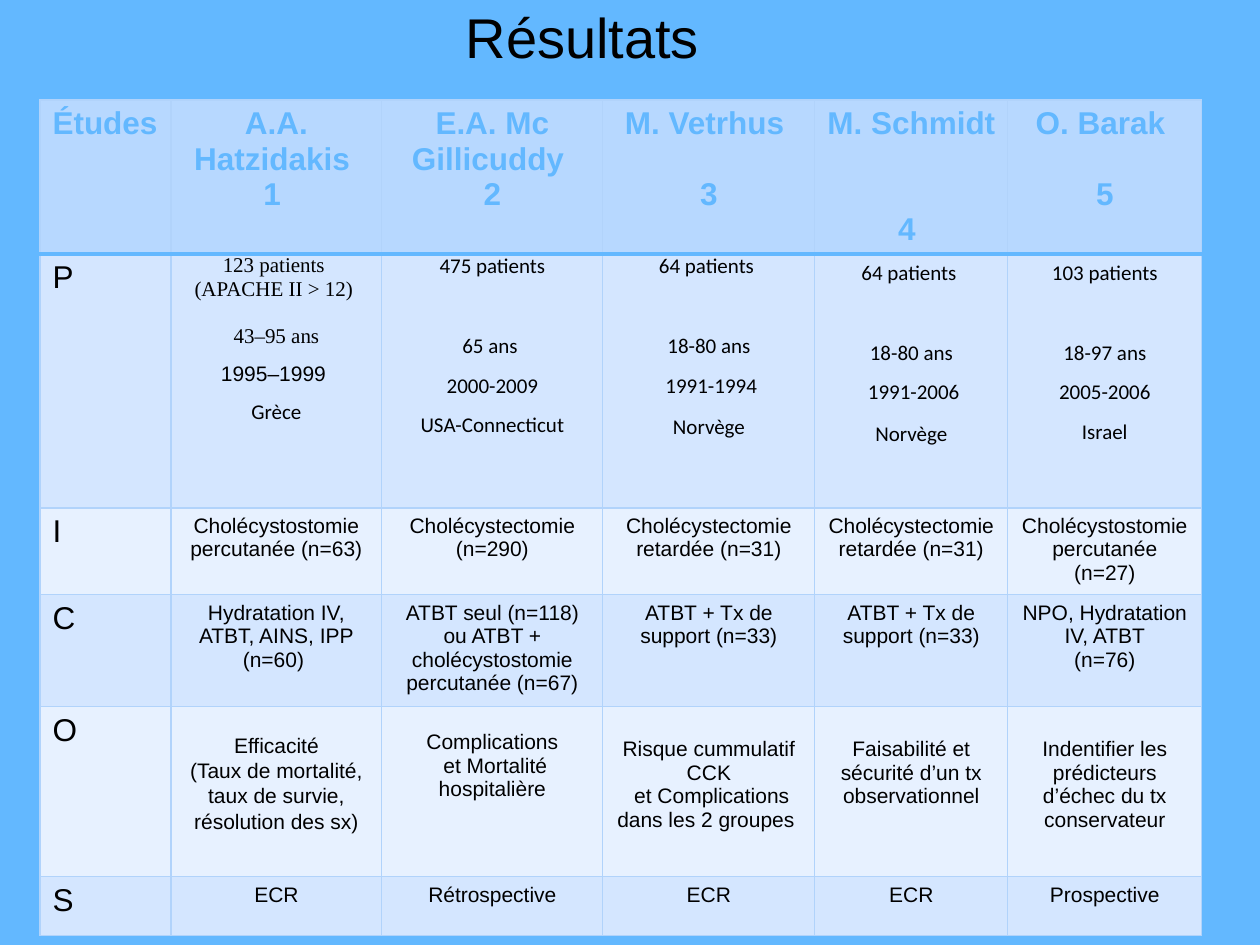
import pptx
import pptx.util
import pptx.dml.color
import pptx.enum.text
import pptx.oxml

Pt = pptx.util.Pt
RGB = pptx.dml.color.RGBColor
ALIGN = pptx.enum.text.PP_ALIGN
SCALE = 914400 / 126

SKY = RGB(0x63, 0xB8, 0xFF)
HEAD = RGB(0xB7, 0xD8, 0xFF)
BAND = RGB(0xD4, 0xE6, 0xFF)
PALE = RGB(0xE7, 0xF1, 0xFF)
EDGE = RGB(0xB1, 0xD3, 0xFB)
BLACK = RGB(0, 0, 0)


def px(n):
    return round(n * SCALE)


def border(cell, side, color, width):
    cell._tc.get_or_add_tcPr().append(pptx.oxml.parse_xml(
        f'<a:{side} xmlns:a="http://schemas.openxmlformats.org/drawingml/2006/main" '
        f'w="{Pt(width)}"><a:solidFill><a:srgbClr val="{color}"/></a:solidFill></a:{side}>'))


deck = pptx.Presentation()
deck.slide_width, deck.slide_height = px(1260), px(945)
slide = deck.slides.add_slide(deck.slide_layouts[5])
slide.background.fill.solid()
slide.background.fill.fore_color.rgb = SKY

# Title
title = slide.shapes.title
for key, val in {"left": 147, "top": 34, "width": 871, "height": 42}.items():
    setattr(title, key, px(val))
frame = title.text_frame
frame.text = "Résultats"
frame.vertical_anchor = pptx.enum.text.MSO_ANCHOR.BOTTOM
frame.auto_size = pptx.enum.text.MSO_AUTO_SIZE.NONE
frame.paragraphs[0].alignment = ALIGN.CENTER
font = frame.paragraphs[0].runs[0].font
for key, val in {"name": "Arial", "size": Pt(32)}.items():
    setattr(font, key, val)
font.color.rgb = BLACK

# Table text: one string per cell, one paragraph per line
rows = [
    ["Études", "A.A. Hatzidakis \n1 ", "E.A. Mc Gillicuddy \n2", "M. Vetrhus \n3",
     "M. Schmidt\n4 ", "O. Barak \n5"],
    ["P", "123 patients \n(APACHE II > 12) \n43–95 ans\n1995–1999 \nGrèce",
     "475 patients\n65 ans \n2000-2009\nUSA-Connecticut",
     "64 patients \n18-80 ans\n 1991-1994\nNorvège",
     "64 patients \n18-80 ans\n 1991-2006\nNorvège",
     "103 patients\n18-97 ans\n2005-2006\nIsrael"],
    ["I", "Cholécystostomie\npercutanée (n=63)", "Cholécystectomie\n(n=290)",
     "Cholécystectomie retardée (n=31)", "Cholécystectomie\nretardée (n=31)",
     "Cholécystostomie\npercutanée (n=27)"],
    ["C", "Hydratation IV, ATBT, AINS, IPP\n(n=60) ",
     "ATBT seul (n=118) ou ATBT + cholécystostomie percutanée (n=67)",
     "ATBT + Tx de support (n=33)", "ATBT + Tx de support (n=33)",
     "NPO, Hydratation IV, ATBT\n(n=76)"],
    ["O", "Efficacité\n(Taux de mortalité,\ntaux de survie, résolution des sx)",
     "Complications\n et Mortalité hospitalière",
     "Risque cummulatif CCK\n et Complications dans les 2 groupes ",
     "Faisabilité et sécurité d’un tx observationnel",
     "Indentifier les prédicteurs d’échec du tx conservateur"],
    ["S", "ECR", "Rétrospective", "ECR", "ECR", "Prospective"],
]
wide = [131, 211, 221, 212, 193, 194]
high = [154, 254, 87, 112, 170, 59]
fills = [HEAD, BAND, PALE, BAND, PALE, BAND]

# Space before each line in points, and top margins in px
gaps = {(0, 3): [0, 20], (0, 4): [0, 40], (0, 5): [0, 20], (1, 1): [0, 0, 14, 8, 8]}
gaps.update({(1, c): [0, 31, 8, 9 if c in (3, 4) else 8] for c in range(2, 6)})
tops = {(1, 1): 0, (1, 2): 0, (1, 3): 0,
        (4, 1): 26, (4, 2): 24, (4, 3): 31, (4, 4): 31, (4, 5): 31}
faces = {(1, 1): ["Times New Roman"] * 3 + ["Arial", "Calibri"]}
faces.update({(1, c): ["Calibri"] * 4 for c in range(2, 6)})

# Table
table = slide.shapes.add_table(6, 6, px(40), px(100), px(sum(wide)), px(sum(high))).table
for col, w in zip(table.columns, wide):
    col.width = px(w)
for row, h in zip(table.rows, high):
    row.height = px(h)

for r, texts in enumerate(rows):
    for c, text in enumerate(texts):
        cell = table.cell(r, c)
        at = (r, c)
        if at in tops:
            cell.margin_top = px(tops[at])
            cell.margin_bottom = 0
        if at == (0, 4):
            cell.margin_left = cell.margin_right = px(9)
        for side in ("lnL", "lnR", "lnT", "lnB"):
            rule = (r == 0 and side == "lnB") or (r == 1 and side == "lnT")
            border(cell, side, SKY if rule else EDGE, 2 if rule else 0.75)
        cell.fill.solid()
        cell.fill.fore_color.rgb = fills[r]
        cell.text_frame.text = text
        for i, para in enumerate(cell.text_frame.paragraphs):
            para.alignment = ALIGN.LEFT if c == 0 else ALIGN.CENTER
            if at in gaps and gaps[at][i]:
                para.space_before = Pt(gaps[at][i])
            if at == (4, 1):
                para.line_spacing = 1.07
            font = para.runs[0].font
            style = {"name": faces[at][i] if at in faces else "Arial",
                     "size": Pt(18 if r == 0 or c == 0 else 12), "bold": r == 0}
            for key, val in style.items():
                setattr(font, key, val)
            font.color.rgb = SKY if r == 0 else BLACK

deck.save("out.pptx")
